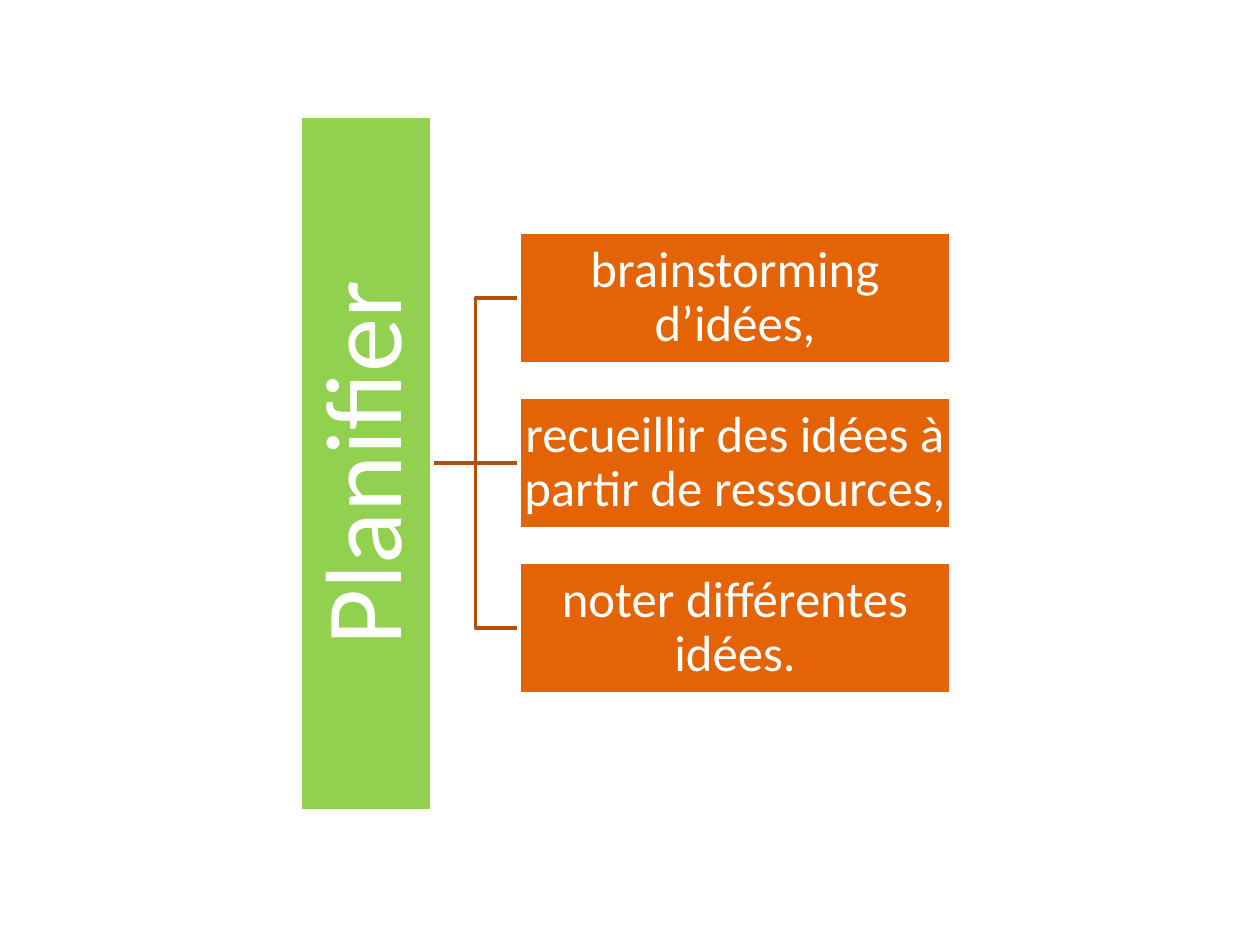
import pptx
import pptx.util
from pptx.dml.color import RGBColor
from pptx.enum.shapes import MSO_CONNECTOR, MSO_SHAPE
from pptx.enum.text import MSO_ANCHOR, PP_ALIGN
from pptx.oxml.ns import qn
from lxml import etree

Pt = pptx.util.Pt
COLORS = {"root": "92D050", "step": "E36305", "link": "B64F04", "white": "FFFFFF"}
STEPS = [
    "brainstorming d’idées,",
    "recueillir des idées à partir de ressources,",
    "noter différentes idées.",
]


def tint(name):
    return RGBColor.from_string(COLORS[name])


def stroke(line, name):
    line.color.rgb = tint(name)
    line.width = Pt(2)


def add_box(slide, box, text, fill, size, inset, turn=0):
    """Add a filled rectangle with centred white text."""
    shape = slide.shapes.add_shape(MSO_SHAPE.RECTANGLE, *map(Pt, box))
    shape.rotation = turn
    shape.shadow.inherit = False
    shape.fill.solid()
    shape.fill.fore_color.rgb = tint(fill)
    stroke(shape.line, "white")

    frame = shape.text_frame
    frame.word_wrap = True
    frame.vertical_anchor = MSO_ANCHOR.MIDDLE
    frame.margin_left = frame.margin_right = Pt(inset)
    frame.margin_top = frame.margin_bottom = Pt(inset)
    para = frame.paragraphs[0]
    para.text = text
    para.alignment = PP_ALIGN.CENTER
    para.line_spacing = 0.9
    para.font.name = "Calibri"
    para.font.size = Pt(size)
    para.font.color.rgb = tint("white")
    return shape


def add_elbow(slide, start, end):
    """Add a bent line that turns halfway across."""
    mid = (start[0] + end[0]) / 2
    pen = slide.shapes.build_freeform(Pt(start[0]), Pt(start[1]))
    bends = [(mid, start[1]), (mid, end[1]), end]
    pen.add_line_segments([(Pt(x), Pt(y)) for x, y in bends], close=False)
    shape = pen.convert_to_shape()
    shape.shadow.inherit = False
    shape.fill.background()
    stroke(shape.line, "link")


def add_straight(slide, start, end):
    line = slide.shapes.add_connector(
        MSO_CONNECTOR.STRAIGHT, *map(Pt, start + end))
    stroke(line.line, "link")
    etree.SubElement(line._element.spPr, qn("a:effectLst"))
    return line


def add_tree(slide, box):
    """Add the root bar, its steps and the links between them."""
    left, top, width, height = box
    thick, gap, wide = 75.6, 18.72, 247
    pitch = thick + gap
    mid = top + height / 2
    step_x = left + width - wide
    start = (left + thick, mid)
    rows = [mid + (i - (len(STEPS) - 1) / 2) * pitch
            for i in range(len(STEPS))]

    # Links lie behind the boxes
    straight = None
    for y in reversed(rows):
        if y == mid:
            straight = add_straight(slide, start, (step_x, y))
        else:
            add_elbow(slide, start, (step_x, y))

    # Root bar, turned to read upwards
    root_x = left + (thick - height) / 2
    root = add_box(slide, (root_x, mid - thick / 2, height, thick),
                   "Planifier", "root", 62, 2.88, turn=270)

    # Steps
    for text, y in zip(STEPS, rows):
        step = add_box(slide, (step_x, y - thick / 2, wide, thick),
                       text, "step", 29, 1.44)
        if y == mid:
            straight.begin_connect(root, 2)
            straight.end_connect(step, 1)
            # The bottom of the turned bar faces right
            straight.begin_x, straight.begin_y = map(Pt, start)


def main():
    deck = pptx.Presentation()
    deck.slide_width, deck.slide_height = Pt(720), Pt(540)
    slide = deck.slides.add_slide(deck.slide_layouts[6])
    add_tree(slide, (171.4, 66.2, 372.2, 396.8))
    deck.save("out.pptx")


if __name__ == "__main__":
    main()
